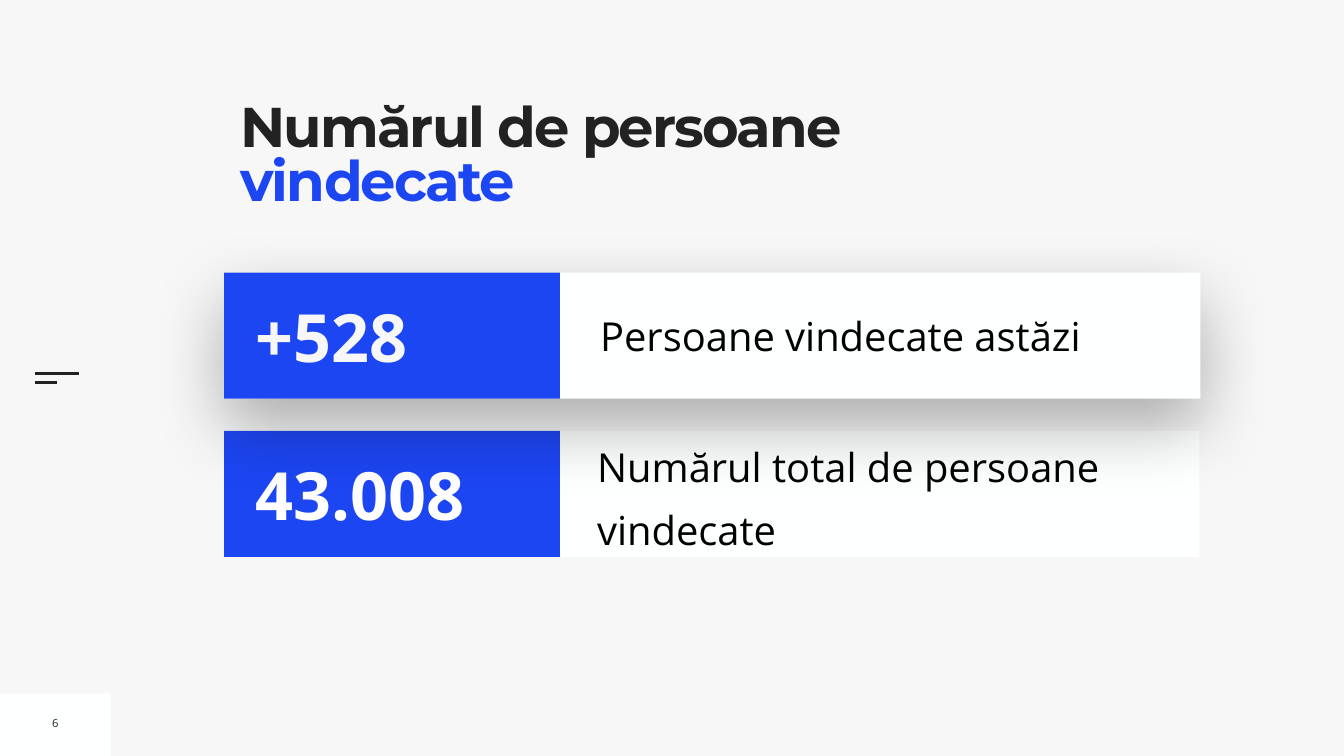
from lxml import etree
from pptx import Presentation
from pptx.dml.color import RGBColor
from pptx.enum import shapes, text
from pptx.oxml import ns
from pptx.util import Inches, Pt

PAPER = RGBColor(0xF7, 0xF7, 0xF7)
WHITE = RGBColor(0xFF, 0xFF, 0xFF)
PANEL = RGBColor(0xFE, 0xFF, 0xFF)
INK = RGBColor(0x22, 0x22, 0x22)
BLACK = RGBColor(0, 0, 0)
BLUE = RGBColor(0x1D, 0x46, 0xF3)
HEADING, BODY = "Montserrat", "Open Sans"


class Deck:
    """Holds the style and the current slide, and draws each kind of element."""

    def __init__(self, prs):
        self.s = prs.slides.add_slide(prs.slide_layouts[5])
        fill = self.s.background.fill
        fill.solid()
        fill.fore_color.rgb = PAPER

    def style(self, r, font, size, color, bold=False):
        r.font.name, r.font.size, r.font.bold = font, Pt(size), bold
        r.font.color.rgb = color

    def title(self, box, parts):
        sp = self.s.shapes.title
        sp.left, sp.top, sp.width, sp.height = map(Inches, box)
        tf = sp.text_frame
        tf.margin_left = tf.margin_right = tf.margin_top = tf.margin_bottom = 0
        tf.vertical_anchor = text.MSO_ANCHOR.TOP
        tf.auto_size = text.MSO_AUTO_SIZE.NONE
        tf.word_wrap = True
        p = tf.paragraphs[0]
        p.alignment = text.PP_ALIGN.LEFT
        p.line_spacing = 0.8
        for words, color in parts:
            r = p.add_run()
            r.text = words
            self.style(r, HEADING, 80, color, True)
            r.font._element.set("spc", "-270")

    def rect(self, parent, box, color, shadow=False):
        sp = parent.shapes.add_shape(shapes.MSO_SHAPE.RECTANGLE, *map(Inches, box))
        sp.fill.solid()
        sp.fill.fore_color.rgb = color
        sp.line.fill.background()
        sp.shadow.inherit = False
        if shadow:
            effects = sp._element.spPr.find(ns.qn("a:effectLst"))
            outer = etree.SubElement(
                effects, ns.qn("a:outerShdw"), blurRad=str(Pt(100)),
                dist=str(Pt(40)), dir="5400000", rotWithShape="0")
            tint = etree.SubElement(outer, ns.qn("a:srgbClr"), val="000000")
            etree.SubElement(tint, ns.qn("a:alpha"), val="30000")

    def line(self, x1, x2, y):
        c = self.s.shapes.add_connector(
            shapes.MSO_CONNECTOR.STRAIGHT, Inches(x1), Inches(y), Inches(x2), Inches(y))
        c.line.color.rgb = INK
        c.line.width = Pt(3)
        etree.SubElement(c._element.spPr, ns.qn("a:effectLst"))

    def label(self, parent, box, words, size, color, bold=False, inset=0.1, wrap=True):
        tf = parent.shapes.add_textbox(*map(Inches, box)).text_frame
        tf.margin_left = tf.margin_right = Inches(inset)
        tf.margin_top = tf.margin_bottom = Inches(inset)
        tf.vertical_anchor = text.MSO_ANCHOR.MIDDLE
        tf.auto_size = text.MSO_AUTO_SIZE.SHAPE_TO_FIT_TEXT
        tf.word_wrap = wrap
        tf.text = words
        p = tf.paragraphs[0]
        self.style(p.runs[0], BODY, size, color, bold)
        return p

    def row(self, top, width, number, color, words, box, inset=0.1, shadow=False):
        group = self.s.shapes.add_group_shape()
        self.rect(group, (4.45, top, width, 2.5), PANEL, shadow)
        p = self.label(group, box, words, 57, BLACK, inset=inset)
        self.rect(group, (4.45, top, 6.66, 2.5), BLUE)
        self.label(group, (4.98, top + 0.35, 6.03, 1.8), number, 95, color, True)
        return p


def main():
    prs = Presentation()
    prs.slide_width, prs.slide_height = Inches(26.67), Inches(15)
    deck = Deck(prs)

    deck.rect(deck.s, (0, 13.76, 2.2, 1.24), PANEL)
    deck.line(0.69, 1.57, 7.41)
    deck.line(0.69, 1.13, 7.59)
    deck.title((4.77, 2.07, 13.01, 2.73),
               [("Numărul de persoane ", INK), ("vindecate", BLUE)])
    p = deck.label(deck.s, (0.93, 14.09, 0.34, 0.51), "6", 16, INK, wrap=False)
    p.alignment = text.PP_ALIGN.CENTER

    p = deck.row(8.55, 19.35, "43.008", WHITE, "Numărul total de persoane vindecate",
                 (11.85, 8.56, 11.95, 2.36), inset=0)
    p.line_spacing = 1.3
    p.space_before = Pt(20)
    deck.row(5.41, 19.37, "+528", PAPER, "Persoane vindecate astăzi",
             (11.81, 6.07, 11.76, 1.16), shadow=True)

    prs.save("out.pptx")


if __name__ == "__main__":
    main()
